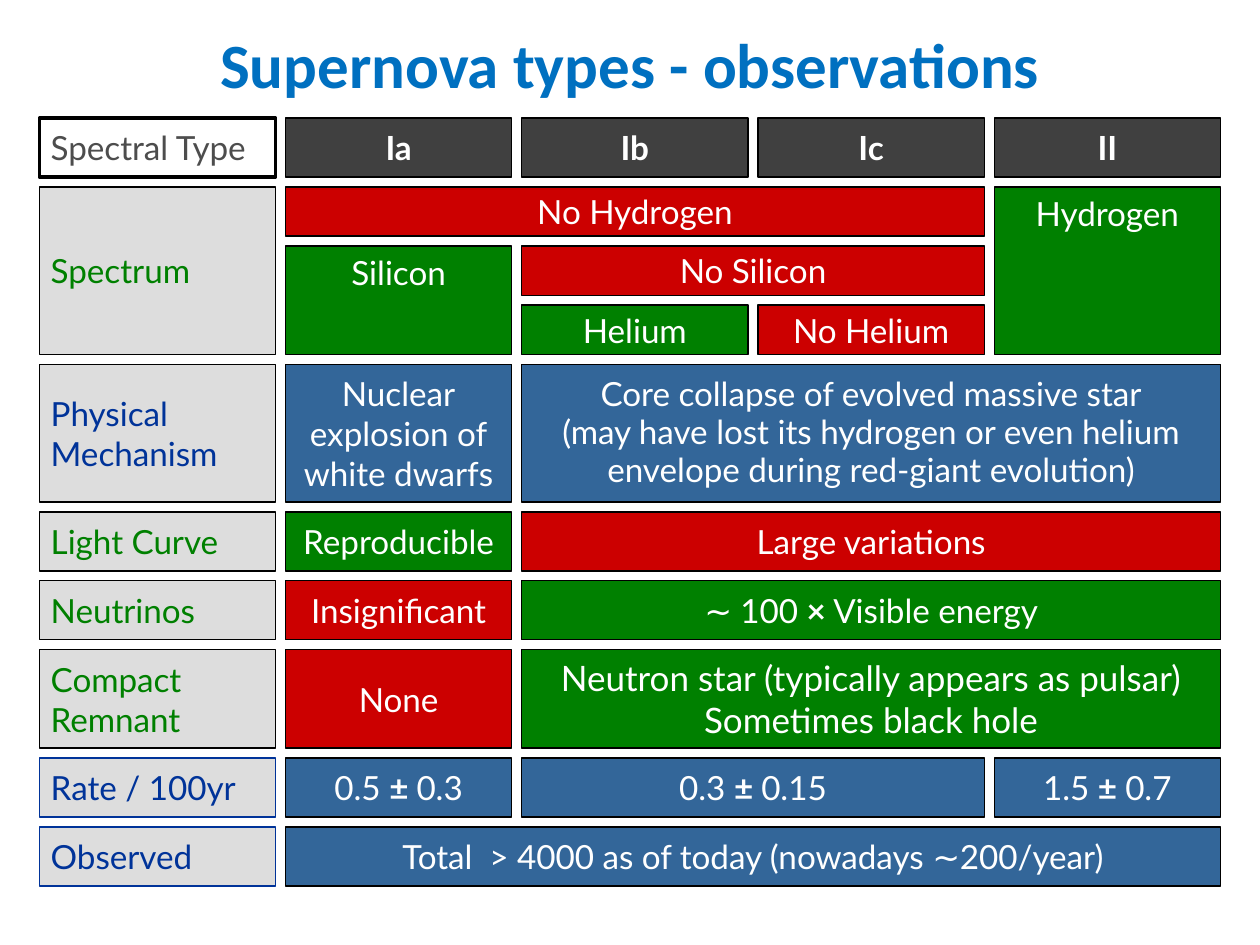
"""Build a slide that compares supernova types on a grid of coloured cells."""
import dataclasses

import pptx
import pptx.dml.color
import pptx.enum.shapes
import pptx.enum.text
import pptx.util

ANCHOR = pptx.enum.text.MSO_ANCHOR
ALIGN = pptx.enum.text.PP_ALIGN


@dataclasses.dataclass(frozen=True)
class Theme:
    title_font: str = "Calibri"
    body_font: str = "Lato"
    title_size: int = 36
    body_size: int = 19
    large_size: int = 20
    title: str = "0070C0"
    black: str = "000000"
    white: str = "FFFFFF"
    dark: str = "404040"
    corner: str = "4D4D4D"
    label: str = "DDDDDD"
    green: str = "008000"
    red: str = "CC0000"
    blue: str = "336699"
    navy: str = "003399"


THEME = Theme()
SLIDE_WIDTH, SLIDE_HEIGHT = 10, 7.5
UNIT = SLIDE_WIDTH / 128
GAP = 1
GRID_LEFT, GRID_TOP = 4, 12
COLUMN_UNITS = (24, 23, 23, 23, 23)
ROW_UNITS = (6, 5, 5, 5, 14, 6, 6, 10, 6, 6)

TITLE = "Supernova types - observations"
TYPES = ("Ia", "Ib", "Ic", "II")

# Labels: row, row span, lines, text colour, line colour
LABELS = (
    (1, 3, ["Spectrum"], THEME.green, THEME.black),
    (4, 1, ["Physical", "Mechanism"], THEME.navy, THEME.black),
    (5, 1, ["Light Curve"], THEME.green, THEME.black),
    (6, 1, ["Neutrinos"], THEME.green, THEME.black),
    (7, 1, ["Compact", "Remnant"], THEME.green, THEME.black),
    (8, 1, ["Rate / 100yr"], THEME.navy, THEME.navy),
    (9, 1, ["Observed"], THEME.navy, THEME.navy),
)

# Findings: row, column, row span, column span, fill, lines (bold between bars), options
FINDINGS = (
    (1, 1, 1, 3, THEME.red, ["No Hydrogen"], {}),
    (1, 4, 3, 1, THEME.green, ["Hydrogen"], {"anchor": ANCHOR.TOP}),
    (2, 1, 2, 1, THEME.green, ["Silicon"], {"anchor": ANCHOR.TOP}),
    (2, 2, 1, 2, THEME.red, ["No Silicon"], {}),
    (3, 2, 1, 1, THEME.green, ["Helium"], {}),
    (3, 3, 1, 1, THEME.red, ["No Helium"], {}),
    (4, 1, 1, 1, THEME.blue, ["Nuclear", "explosion of", "white dwarfs"], {}),
    (4, 2, 1, 3, THEME.blue, ["Core collapse of evolved massive star",
                              "(may have lost its hydrogen or even helium",
                              "envelope during red-giant evolution)"], {"spacing": 0.95}),
    (5, 1, 1, 1, THEME.green, ["Reproducible"], {}),
    (5, 2, 1, 3, THEME.red, ["Large variations"], {}),
    (6, 1, 1, 1, THEME.red, ["Insignificant"], {}),
    (6, 2, 1, 3, THEME.green, ["∼ 100 |×| Visible energy"], {}),
    (7, 1, 1, 1, THEME.red, ["None"], {}),
    (7, 2, 1, 3, THEME.green, ["Neutron star (typically appears as pulsar)",
                               "Sometimes black hole"], {"size": THEME.large_size}),
    (8, 1, 1, 1, THEME.blue, ["0.5 |± |0.3"], {}),
    (8, 2, 1, 2, THEME.blue, ["0.3 |± |0.15"], {}),
    (8, 4, 1, 1, THEME.blue, ["1.5 |± |0.7"], {}),
    (9, 1, 1, 4, THEME.blue, ["Total  > 4000 as of today (nowadays ∼200/year)"], {}),
)


def rgb(value):
    """Turn a hexadecimal string into a colour."""
    return pptx.dml.color.RGBColor.from_string(value)


def extent(start, sizes, first, span):
    """Return the start and length, in slide lengths, of a span of grid tracks."""
    begin = start + sum(sizes[:first]) + GAP * first
    length = sum(sizes[first:first + span]) + GAP * (span - 1)
    return pptx.util.Inches(begin * UNIT), pptx.util.Inches(length * UNIT)


def add_run(paragraph, text, font_name, size, color, bold):
    """Append one formatted run."""
    run = paragraph.add_run()
    run.text = text
    run.font.name = font_name
    run.font.size = pptx.util.Pt(size)
    run.font.bold = bold
    run.font.color.rgb = rgb(color)


def add_cell(slide, row, column, row_span, column_span, fill, lines, *,
             color=THEME.white, outline=THEME.black, outline_width=0.75, bold=False,
             align=ALIGN.CENTER, anchor=ANCHOR.MIDDLE, size=THEME.body_size, spacing=None):
    """Place one rectangle on the grid and write its lines."""
    left, width = extent(GRID_LEFT, COLUMN_UNITS, column, column_span)
    top, height = extent(GRID_TOP, ROW_UNITS, row, row_span)
    shape = slide.shapes.add_shape(
        pptx.enum.shapes.MSO_SHAPE.RECTANGLE, left, top, width, height)
    shape.shadow.inherit = False
    shape.fill.solid()
    shape.fill.fore_color.rgb = rgb(fill)
    shape.line.color.rgb = rgb(outline)
    shape.line.width = pptx.util.Pt(outline_width)
    frame = shape.text_frame
    frame.word_wrap = False
    frame.vertical_anchor = anchor
    frame.margin_left = frame.margin_right = pptx.util.Inches(0.09)
    frame.margin_top = frame.margin_bottom = pptx.util.Inches(0.05)
    for index, line in enumerate(lines):
        paragraph = frame.add_paragraph() if index else frame.paragraphs[0]
        paragraph.alignment = align
        paragraph.line_spacing = spacing
        for position, text in enumerate(line.split("|")):
            add_run(paragraph, text, THEME.body_font, size, color, bold or position % 2 == 1)


def add_title(slide):
    """Move and format the title placeholder."""
    title = slide.shapes.title
    title.left, title.top = pptx.util.Inches(0.33), pptx.util.Inches(0.25)
    title.width, title.height = pptx.util.Inches(9.34), pptx.util.Inches(0.51)
    title.text_frame.vertical_anchor = ANCHOR.MIDDLE
    paragraph = title.text_frame.paragraphs[0]
    paragraph.alignment = ALIGN.CENTER
    add_run(paragraph, TITLE, THEME.title_font, THEME.title_size, THEME.title, True)


def main():
    """Create the presentation and save it."""
    presentation = pptx.Presentation()
    presentation.slide_width = pptx.util.Inches(SLIDE_WIDTH)
    presentation.slide_height = pptx.util.Inches(SLIDE_HEIGHT)
    slide = presentation.slides.add_slide(presentation.slide_layouts.get_by_name("Title Only"))
    add_title(slide)
    add_cell(slide, 0, 0, 1, 1, THEME.white, ["Spectral Type"], color=THEME.corner,
             outline_width=2, align=ALIGN.LEFT)
    for column, name in enumerate(TYPES, start=1):
        add_cell(slide, 0, column, 1, 1, THEME.dark, [name], bold=True)
    for row, row_span, lines, color, outline in LABELS:
        add_cell(slide, row, 0, row_span, 1, THEME.label, lines, color=color,
                 outline=outline, align=ALIGN.LEFT)
    for *place, fill, lines, options in FINDINGS:
        add_cell(slide, *place, fill, lines, **options)
    presentation.save("out.pptx")


if __name__ == "__main__":
    main()
